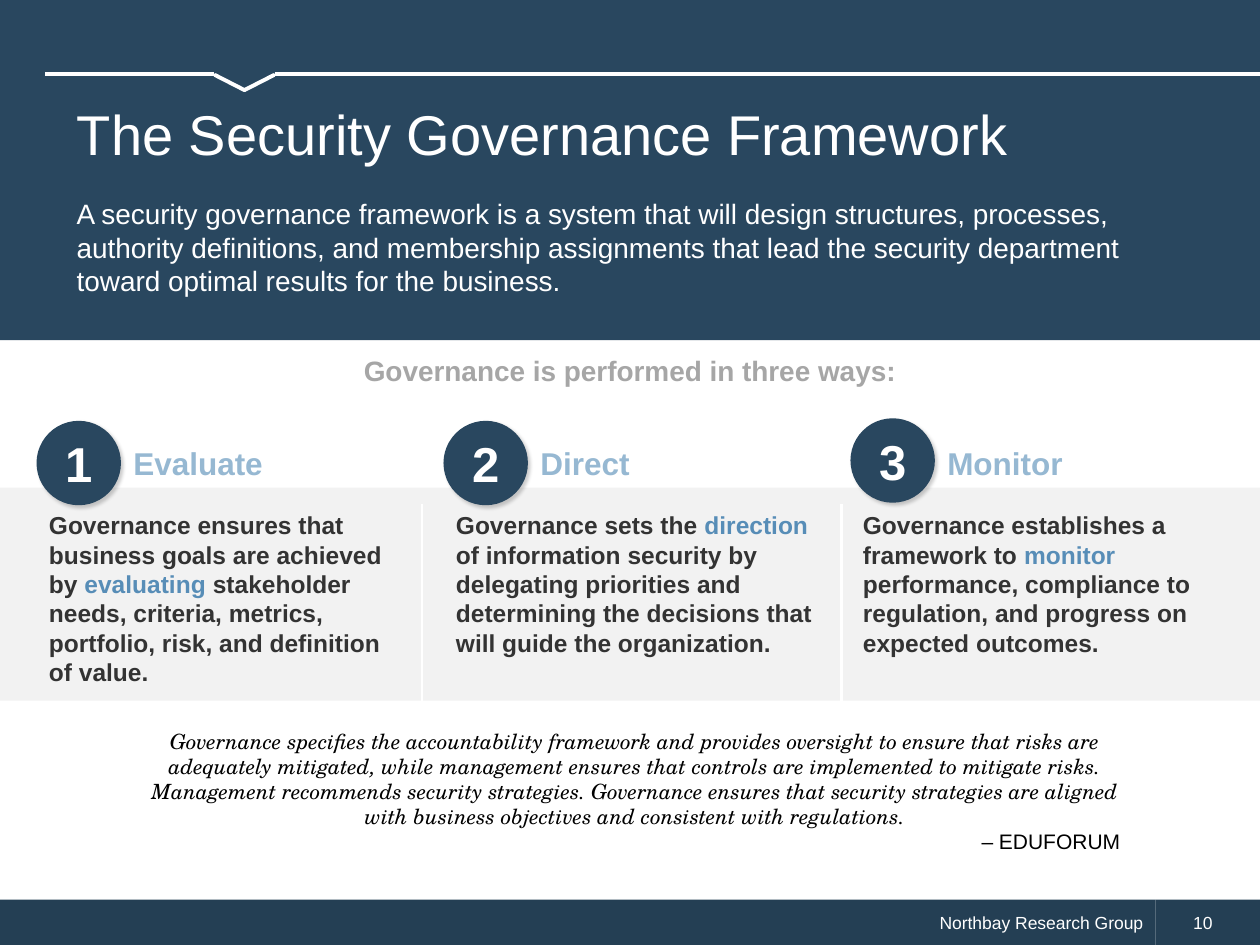
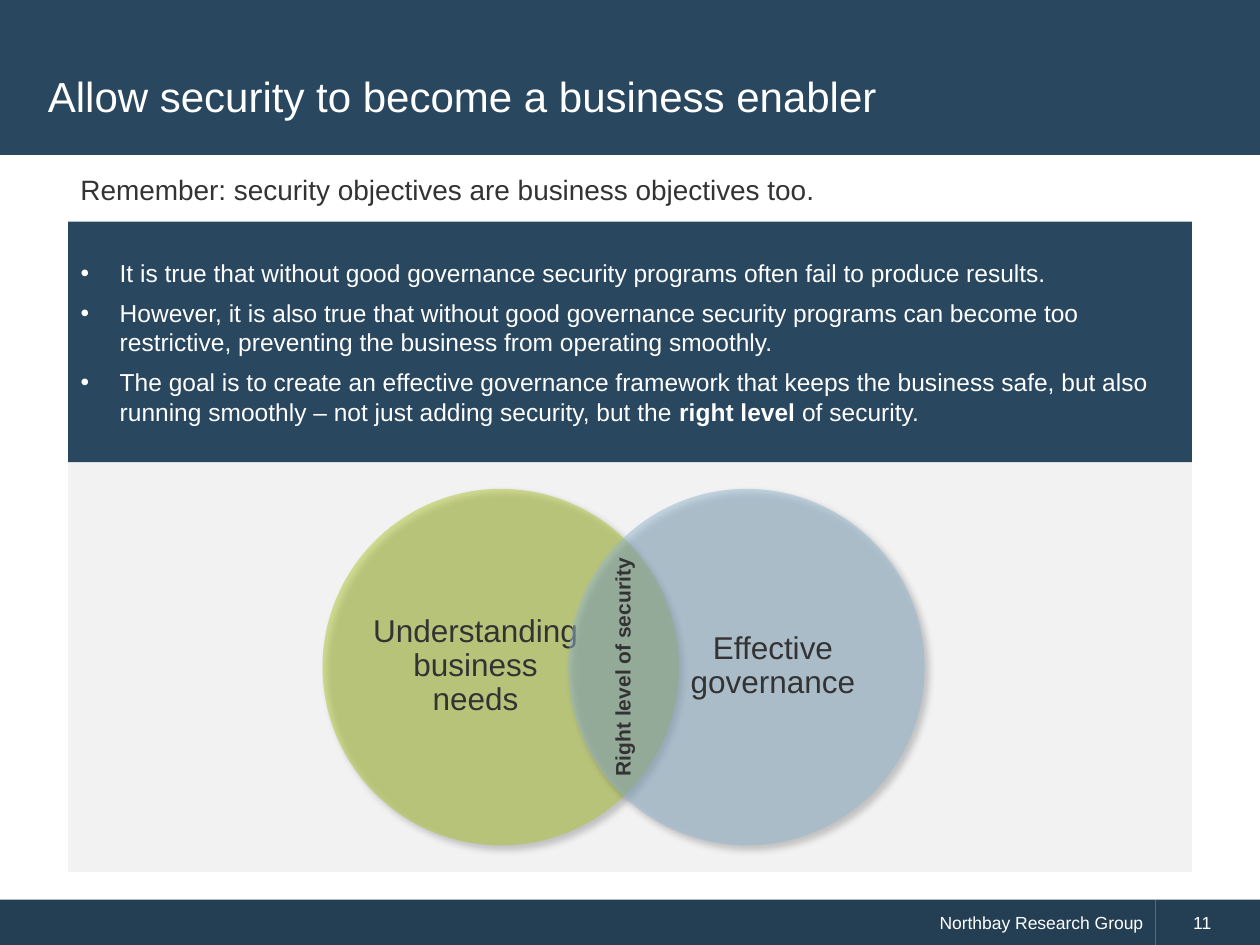
from lxml import etree
from pptx import Presentation
from pptx.dml.color import RGBColor
from pptx.enum.shapes import MSO_CONNECTOR, MSO_SHAPE
from pptx.enum.text import MSO_ANCHOR, MSO_AUTO_SIZE, PP_ALIGN
from pptx.oxml.ns import qn
from pptx.util import Inches, Pt

NAVY = RGBColor(0x29, 0x47, 0x5F)
DARK_NAVY = RGBColor(0x24, 0x3F, 0x54)
BLUE = RGBColor(0x57, 0x8D, 0xB7)
LIGHT_BLUE = RGBColor(0x96, 0xB8, 0xD2)
GREEN = RGBColor(0xB0, 0xC5, 0x34)
PALE_GRAY = RGBColor(0xF2, 0xF2, 0xF2)
MID_GRAY = RGBColor(0xA6, 0xA6, 0xA6)
CHARCOAL = RGBColor(0x33, 0x33, 0x33)
WHITE = RGBColor(0xFF, 0xFF, 0xFF)
BLACK = RGBColor(0, 0, 0)

SANS = "Arial"
SERIF = "TeX Gyre Schola"
LEFT, CENTER, RIGHT = PP_ALIGN.LEFT, PP_ALIGN.CENTER, PP_ALIGN.RIGHT
TOP, MIDDLE = MSO_ANCHOR.TOP, MSO_ANCHOR.MIDDLE
NO_AUTOFIT = MSO_AUTO_SIZE.NONE
RECTANGLE, OVAL, CHEVRON = MSO_SHAPE.RECTANGLE, MSO_SHAPE.OVAL, MSO_SHAPE.CHEVRON
STRAIGHT = MSO_CONNECTOR.STRAIGHT
TITLE_ONLY, TITLE_AND_BODY = 5, 1

PUBLISHER = "Northbay Research Group"

# number, heading, text with the key word between bars, text width, badge top
WAYS = [
    ("1", "Evaluate", "Governance ensures that business goals are achieved by |evaluating| "
     "stakeholder needs, criteria, metrics, portfolio, risk, and definition of value.", 2.95, 3.34),
    ("2", "Direct", "Governance sets the |direction| of information security by delegating "
     "priorities and determining the decisions that will guide the organization.", 3.15, 3.34),
    ("3", "Monitor", "Governance establishes a framework to |monitor| performance, compliance "
     "to regulation, and progress on expected outcomes.", 2.95, 3.32),
]
QUOTE = ("Governance specifies the accountability framework and provides oversight to ensure that "
         "risks are adequately mitigated, while management ensures that controls are implemented "
         "to mitigate risks. Management recommends security strategies. Governance ensures that "
         "security strategies are aligned with business objectives and consistent with regulations.")
POINTS = [
    "It is true that without good governance security programs often fail to produce results.",
    "However, it is also true that without good governance security programs can become too "
    "restrictive, preventing the business from operating smoothly.",
    "The goal is to create an effective governance framework that keeps the business safe, but "
    "also running smoothly – not just adding security, but the |right level| of security.",
]
# left, colour, label, label left
VENN_CIRCLES = [
    (2.56, GREEN, "Understanding business needs", 2.96),
    (4.51, LIGHT_BLUE, "Effective governance", 5.32),
]


def write(paragraph, text, size, color, bold=False, italic=False, font=SANS,
          align=LEFT, key_color=None, key_bold=None):
    """Write text; pieces between bars take the key colour and weight."""
    paragraph.alignment = align
    for index, piece in enumerate(text.split("|")):
        is_key = index % 2 == 1
        run = paragraph.add_run()
        run.text = piece
        run.font.name = font
        run.font.size = Pt(size)
        run.font.italic = italic
        run.font.bold = key_bold if is_key and key_bold is not None else bold
        run.font.color.rgb = key_color if is_key and key_color is not None else color


def set_frame(shape, anchor=TOP, margin=None):
    text_frame = shape.text_frame
    text_frame.word_wrap = True
    text_frame.auto_size = NO_AUTOFIT
    text_frame.vertical_anchor = anchor
    if margin is not None:
        text_frame.margin_left = text_frame.margin_right = Inches(margin)
        text_frame.margin_top = text_frame.margin_bottom = Inches(margin)
    return text_frame


def place(shape, left, top, width, height):
    shape.left, shape.top = Inches(left), Inches(top)
    shape.width, shape.height = Inches(width), Inches(height)


def add_text(slide, box, text, size, color, anchor=TOP, margin=None, **style):
    text_box = slide.shapes.add_textbox(*map(Inches, box))
    write(set_frame(text_box, anchor, margin).paragraphs[0], text, size, color, **style)
    return text_box


def add_filled(slide, kind, box, color):
    shape = slide.shapes.add_shape(kind, *map(Inches, box))
    shape.shadow.inherit = False
    shape.fill.solid()
    shape.fill.fore_color.rgb = color
    shape.line.fill.background()
    return shape


def add_line(slide, x1, y1, x2, y2, width):
    line = slide.shapes.add_connector(STRAIGHT, *map(Inches, (x1, y1, x2, y2)))
    line.line.color.rgb = WHITE
    line.line.width = Pt(width)
    etree.SubElement(line.element.spPr, qn("a:effectLst"))


def set_alpha(color_element, percent):
    etree.SubElement(color_element, qn("a:alpha"), val=str(percent * 1000))


def add_shadow(shape, opacity, blur, distance):
    effects = shape.element.spPr.find(qn("a:effectLst"))
    shadow = etree.SubElement(effects, qn("a:outerShdw"), blurRad=str(Pt(blur)),
                              dist=str(Pt(distance)), dir=str(45 * 60000),
                              algn="tl", rotWithShape="0")
    set_alpha(etree.SubElement(shadow, qn("a:srgbClr"), val=str(BLACK)), opacity)


def set_title(slide, box, text, size, anchor):
    """Fill the title placeholder and bring it in front of the header band."""
    title = slide.shapes.title
    place(title, *box)
    write(set_frame(title, anchor).paragraphs[0], text, size, WHITE)
    slide.shapes.element.append(title.element)


def start_slide(presentation, layout, number, header_height):
    slide = presentation.slides.add_slide(presentation.slide_layouts[layout])
    footer = add_filled(slide, RECTANGLE, (0, 7.14, 9.17, 0.37), DARK_NAVY)
    write(set_frame(footer, MIDDLE).paragraphs[0], PUBLISHER, 10, WHITE, align=RIGHT)
    page = add_filled(slide, RECTANGLE, (9.17, 7.14, 0.83, 0.37), DARK_NAVY)
    write(set_frame(page, MIDDLE).paragraphs[0], str(number), 10, WHITE)
    page.text_frame.margin_left = Inches(0.3)
    add_filled(slide, RECTANGLE, (0, 0, 10, header_height), NAVY)
    return slide


def add_notched_rule(slide):
    add_line(slide, 0.36, 0.59, 1.7, 0.59, 2.25)
    notch = add_filled(slide, CHEVRON, (1.88, 0.42, 0.12, 0.47), NAVY)
    notch.adjustments[0] = 1.02
    notch.rotation = 90
    notch.line.color.rgb = WHITE
    notch.line.width = Pt(2.25)
    add_line(slide, 2.18, 0.59, 10, 0.59, 2.25)


def add_way(slide, left, number, heading, text, width, badge_top):
    add_text(slide, (left, 4, width, 1.51), text, 14, CHARCOAL, bold=True, key_color=BLUE)
    add_text(slide, (left + 0.67, 3.48, 1.5, 0.39), heading, 18, LIGHT_BLUE, MIDDLE, bold=True)
    badge = add_filled(slide, OVAL, (left, badge_top, 0.67, 0.67), NAVY)
    add_shadow(badge, 20, 2, 2)
    write(set_frame(badge, MIDDLE, 0).paragraphs[0], number, 28, WHITE, bold=True, align=CENTER)


def add_venn_circle(slide, left, color, label, label_left):
    circle = add_filled(slide, OVAL, (left, 3.88, 2.83, 2.83), color)
    set_alpha(circle.element.spPr.find(qn("a:solidFill"))[0], 50)
    add_shadow(circle, 40, 4, 3)
    label_box = add_text(slide, (label_left, 4.21, 1.63, 2.16), label, 18, CHARCOAL,
                         MIDDLE, 0, align=CENTER)
    label_box.text_frame.paragraphs[0].line_spacing = 0.9


def fill_points(body):
    place(body, 0.54, 1.76, 8.92, 1.91)
    body.fill.solid()
    body.fill.fore_color.rgb = NAVY
    text_frame = set_frame(body, MIDDLE)
    for index, point in enumerate(POINTS):
        paragraph = text_frame.add_paragraph() if index else text_frame.paragraphs[0]
        write(paragraph, point, 14, WHITE, key_bold=True)
        paragraph.space_before = Pt(0)
        paragraph.space_after = Pt(6)
        properties = paragraph.runs[0].font and paragraph._p.get_or_add_pPr()
        properties.set("marL", str(Inches(0.31)))
        properties.set("indent", str(-Inches(0.31)))


def build_framework_slide(presentation):
    slide = start_slide(presentation, TITLE_ONLY, 10, 2.7)
    add_notched_rule(slide)
    set_title(slide, (0.51, 0.74, 9.2, 0.64), "The Security Governance Framework", 32, TOP)
    add_text(slide, (0.51, 1.51, 9.2, 0.91),
             "A security governance framework is a system that will design structures, processes, "
             "authority definitions, and membership assignments that lead the security department "
             "toward optimal results for the business.", 16, WHITE)
    add_text(slide, (0.29, 2.76, 9.42, 0.37), "Governance is performed in three ways:",
             16, MID_GRAY, bold=True, align=CENTER)
    add_filled(slide, RECTANGLE, (0, 3.87, 10, 1.69), PALE_GRAY)
    for divider in (3.35, 6.68):
        add_line(slide, divider, 4, divider, 5.56, 1.5)
    for index, way in enumerate(WAYS):
        add_way(slide, 0.29 + 3.23 * index, *way)
    quote = add_text(slide, (1.09, 5.73, 7.9, 1.11), QUOTE, 12, BLACK,
                     italic=True, font=SERIF, align=CENTER)
    write(quote.text_frame.add_paragraph(), "– EDUFORUM", 12, BLACK, align=RIGHT)


def build_enabler_slide(presentation):
    slide = start_slide(presentation, TITLE_AND_BODY, 11, 1.23)
    set_title(slide, (0.28, 0.28, 9.43, 0.96), "Allow security to become a business enabler",
              24, MIDDLE)
    add_text(slide, (0.54, 1.32, 8.3, 0.37),
             "Remember: security objectives are business objectives too.", 16, CHARCOAL)
    fill_points(slide.placeholders[1])
    add_filled(slide, RECTANGLE, (0.54, 3.67, 8.92, 3.25), PALE_GRAY)
    for circle in VENN_CIRCLES:
        add_venn_circle(slide, *circle)
    overlap = add_text(slide, (4.79, 4.25, 0.4, 2.09), "Right level of security", 12, CHARCOAL,
                       bold=True, align=CENTER)
    overlap.element.find(".//" + qn("a:bodyPr")).set("vert", "vert270")


def main():
    presentation = Presentation()
    presentation.slide_width, presentation.slide_height = Inches(10), Inches(7.5)
    build_framework_slide(presentation)
    build_enabler_slide(presentation)
    presentation.save("out.pptx")


if __name__ == "__main__":
    main()
